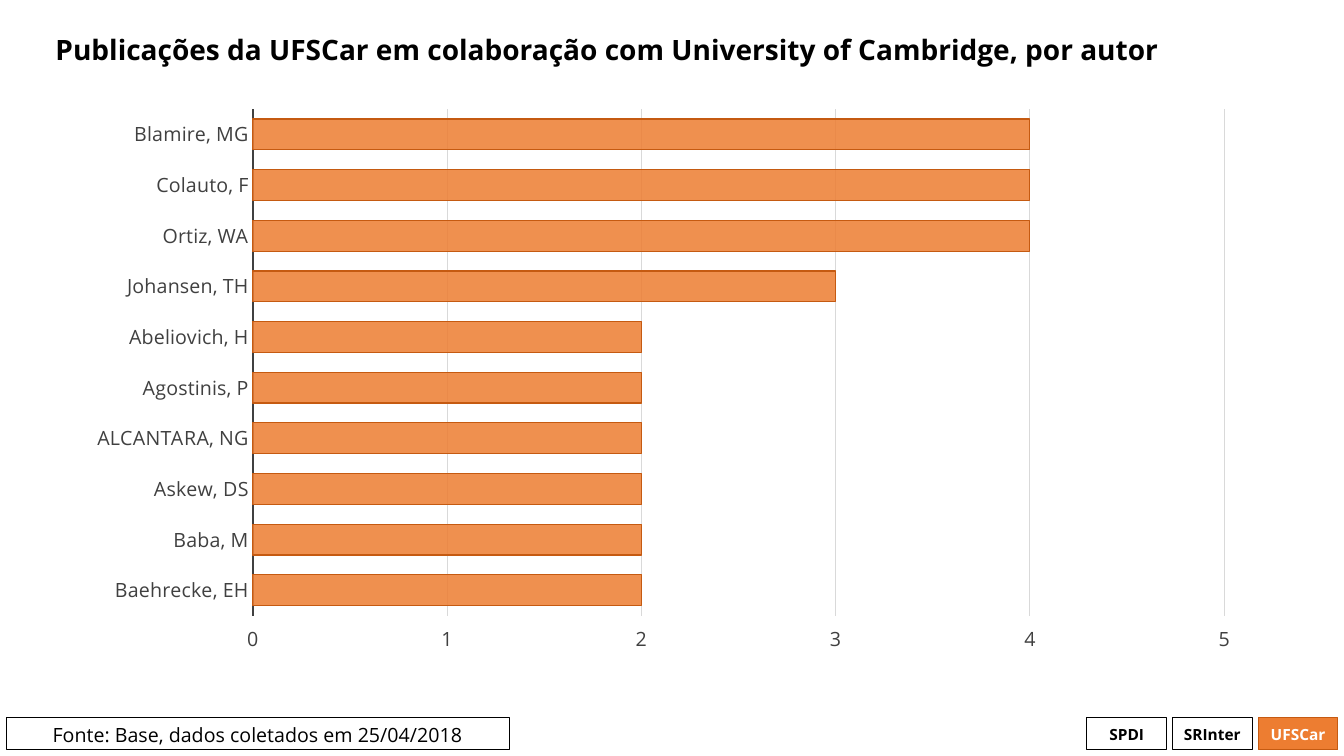
from lxml import etree
from pptx import Presentation
from pptx.chart.data import CategoryChartData
from pptx.dml.color import RGBColor
from pptx.enum.chart import (XL_CHART_TYPE as Kind, XL_TICK_MARK as Tick,
                             XL_TICK_LABEL_POSITION as Spot)
from pptx.enum.shapes import MSO_SHAPE as Shape
from pptx.enum.text import MSO_ANCHOR as Anchor, PP_ALIGN as Align
from pptx.oxml.ns import qn
from pptx.util import Inches, Pt

FONT = "Open Sans"
HUES = {"black": "000000", "white": "FFFFFF", "orange": "ED7D31",
        "rust": "C55A11", "gray": "404040", "grid": "D9D9D9"}
AUTHORS = {"Blamire, MG": 4, "Colauto, F": 4, "Ortiz, WA": 4,
           "Johansen, TH": 3, "Abeliovich, H": 2, "Agostinis, P": 2,
           "ALCANTARA, NG": 2, "Askew, DS": 2, "Baba, M": 2,
           "Baehrecke, EH": 2}


def rgb(hue):
    return RGBColor.from_string(HUES[hue])


def style(font, size, hue, bold=False):
    font.name, font.size, font.bold = FONT, Pt(size), bold
    font.color.rgb = rgb(hue)


def stroke(line, hue, width=0.75):
    line.color.rgb = rgb(hue)
    line.width = Pt(width)


def add_title(slide, text, x, y, w, h):
    title = slide.shapes.title
    title.left, title.top = Inches(x), Inches(y)
    title.width, title.height = Inches(w), Inches(h)
    frame = title.text_frame
    frame.text = text
    frame.word_wrap = True
    frame.vertical_anchor = Anchor.MIDDLE
    para = frame.paragraphs[0]
    para.alignment, para.line_spacing = Align.LEFT, 0.9
    style(para.runs[0].font, 20, "black", True)


def add_label(slide, text, x, y, w, h, size=11, bold=True, fill=None,
              edge="black", ink="black", anchor=Anchor.MIDDLE):
    box = slide.shapes.add_shape(Shape.RECTANGLE, Inches(x), Inches(y),
                                 Inches(w), Inches(h))
    box.shadow.inherit = False
    if fill:
        box.fill.solid()
        box.fill.fore_color.rgb = rgb(fill)
    else:
        box.fill.background()
    stroke(box.line, edge)
    frame = box.text_frame
    frame.text = text
    frame.word_wrap = True
    frame.vertical_anchor = anchor
    para = frame.paragraphs[0]
    para.alignment = Align.CENTER
    style(para.runs[0].font, size, ink, bold)


def add_footer(slide, x, y, w, h):
    add_label(slide, "Fonte: Base, dados coletados em 25/04/2018", x, y,
              4.99, h, size=14, bold=False, anchor=Anchor.TOP)
    # Unit tags, set flush right
    tags = [("SPDI", {}), ("SRInter", {}),
            ("UFSCar", {"fill": "orange", "edge": "rust", "ink": "white"})]
    wide, step = 0.79, 0.85
    first = x + w - wide - step * (len(tags) - 1)
    for i, (text, look) in enumerate(tags):
        add_label(slide, text, first + i * step, y, wide, h, **look)


def add_bars(slide, x, y, w, h):
    data = CategoryChartData()
    data.categories = list(AUTHORS)
    data.add_series("Series 1", list(AUTHORS.values()))
    chart = slide.shapes.add_chart(Kind.BAR_CLUSTERED, Inches(x), Inches(y),
                                   Inches(w), Inches(h), data).chart
    chart.has_legend = chart.has_title = False
    style(chart.font, 14, "black")

    # Bars, slightly see-through
    plot = chart.plots[0]
    plot.gap_width, plot.vary_by_categories = 65, False
    series = plot.series[0]
    fill = series.format.fill
    fill.solid()
    fill.fore_color.rgb = rgb("orange")
    tint = next(series._element.iter(qn("a:srgbClr")))
    etree.SubElement(tint, qn("a:alpha")).set("val", "85000")
    stroke(series.format.line, "rust")

    # Axes: first author on top, counts below
    names, count = chart.category_axis, chart.value_axis
    for axis in (names, count):
        axis.major_tick_mark = axis.minor_tick_mark = Tick.NONE
        style(axis.tick_labels.font, 14, "gray")
    names.reverse_order = True
    stroke(names.format.line, "gray", 1.5)
    count.tick_label_position = Spot.HIGH
    count.minimum_scale, count.maximum_scale, count.major_unit = 0, 5, 1
    count.format.line.fill.background()
    stroke(count.major_gridlines.format.line, "grid")


def main():
    deck = Presentation()
    deck.slide_width, deck.slide_height = Inches(13.33), Inches(7.5)
    slide = deck.slides.add_slide(deck.slide_layouts[5])
    add_footer(slide, 0.06, 7.12, 13.21, 0.32)
    add_title(slide, "Publicações da UFSCar em colaboração com "
              "University of Cambridge, por autor", 0.45, 0.06, 12.41, 0.91)
    add_bars(slide, 0.91, 0.97, 11.52, 5.62)
    deck.save("out.pptx")


if __name__ == "__main__":
    main()
